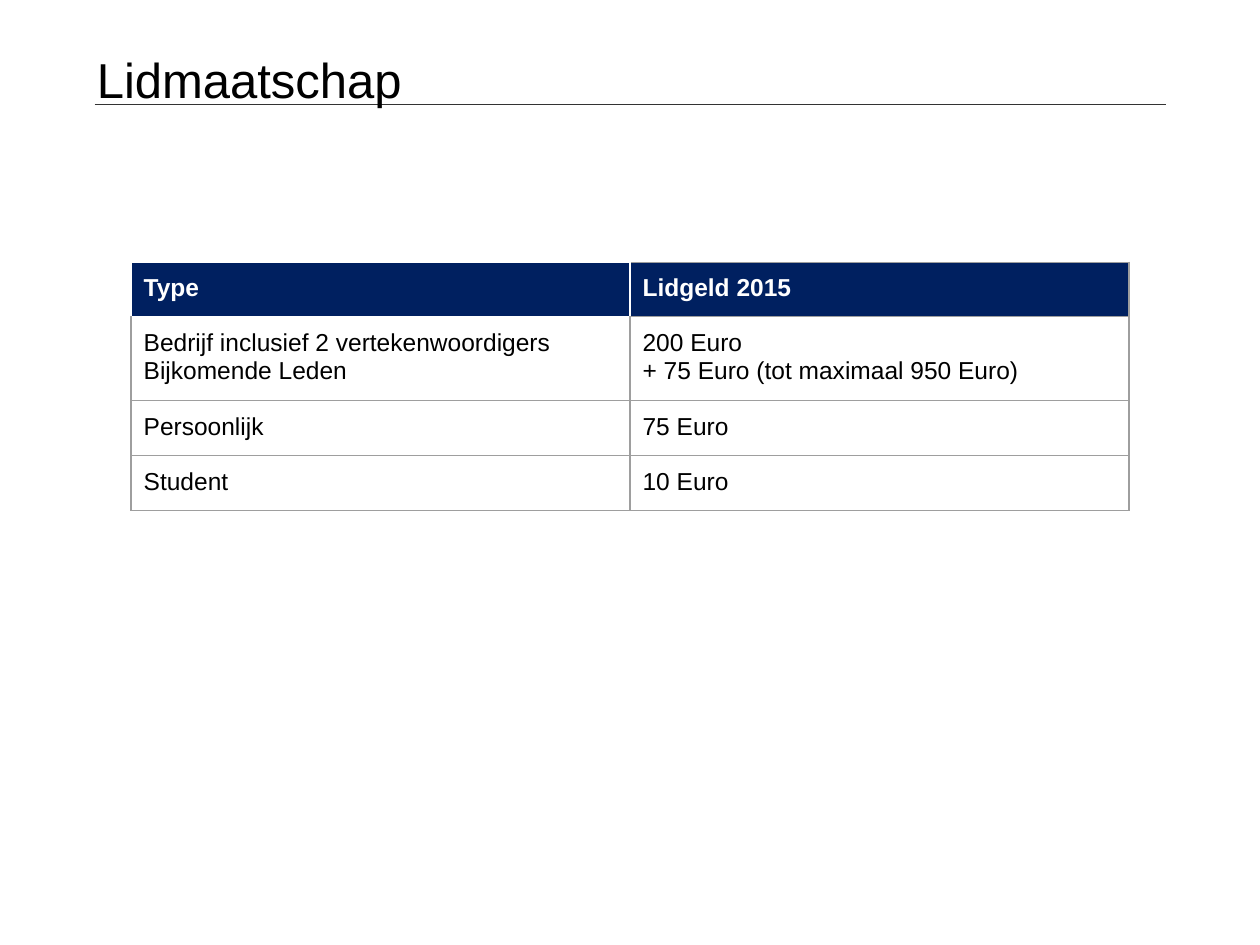
from copy import deepcopy

from pptx import Presentation
from pptx import util as u
from pptx.dml.color import RGBColor
from pptx.enum import shapes, text
from pptx.oxml import parse_xml
from pptx.oxml.ns import nsdecls, qn

WIDTH, HEIGHT = u.Inches(10), u.Inches(7.5)
FONT = "Arial"
COLORS = {
    "black": "000000",
    "white": "FFFFFF",
    "navy": "002060",
    "rule": "333333",
    "grid": "9E9E9E",
}
FEES = [
    ("Type", "Lidgeld 2015"),
    ("Bedrijf inclusief 2 vertekenwoordigers\vBijkomende Leden",
     "200 Euro\v+ 75 Euro (tot maximaal 950 Euro)"),
    ("Persoonlijk", "75 Euro"),
    ("Student", "10 Euro"),
]


def color(name):
    return RGBColor.from_string(COLORS[name])


def format_text(frame, size, color_name, bold=False):
    for para in frame.paragraphs:
        for span in para.runs:
            span.font.name = FONT
            span.font.size = u.Pt(size)
            span.font.bold = bold
            span.font.color.rgb = color(color_name)
        # Line breaks take the size of the text around them
        for line_break in para._p.findall(qn("a:br")):
            line_break.append(deepcopy(para.runs[0]._r.rPr))


def add_title(page, title):
    box = page.shapes.add_textbox(u.Inches(0.67), u.Inches(0.29),
                                  u.Inches(7.09), u.Inches(0.48))
    frame = box.text_frame
    frame.word_wrap = True
    frame.vertical_anchor = text.MSO_ANCHOR.TOP
    frame.margin_top = u.Inches(0.1)
    frame.text = title
    format_text(frame, 28, "black")


def add_rule(page):
    margin, top = int(WIDTH * 0.075), u.Inches(0.83)
    rule = page.shapes.add_connector(shapes.MSO_CONNECTOR.STRAIGHT,
                                     margin, top, WIDTH - margin, top)
    rule.line.color.rgb = color("rule")
    rule.line.width = u.Pt(0.75)
    rule._element.spPr.append(parse_xml(f"<a:effectLst {nsdecls('a')}/>"))


def set_borders(cell, names):
    """Draw the left, right, top and bottom borders, in that order."""
    properties = cell._tc.get_or_add_tcPr()
    for index, (side, name) in enumerate(zip("LRTB", names)):
        properties.insert(index, parse_xml(
            f'<a:ln{side} {nsdecls("a")} w="{u.Pt(0.75)}"><a:solidFill>'
            f'<a:srgbClr val="{COLORS[name]}"/></a:solidFill></a:ln{side}>'))


def border_names(row, column):
    """White lines surround the first header cell, grey ones the rest."""
    if (row, column) == (0, 0):
        return ["white"] * 4
    left = "white" if (row, column) == (0, 1) else "grid"
    top = "white" if (row, column) == (1, 0) else "grid"
    return [left, "grid", top, "grid"]


def fill_cell(cell, words, header):
    cell.margin_left = cell.margin_right = u.Inches(0.1)
    cell.margin_top = cell.margin_bottom = u.Inches(0.1)
    cell.text_frame.text = words
    if header:
        cell.fill.solid()
        cell.fill.fore_color.rgb = color("navy")
    else:
        cell.fill.background()
    format_text(cell.text_frame, 14, "white" if header else "black", header)


def add_fee_table(page):
    column_width, row_height = u.Inches(3.96), u.Inches(0.42)
    rows, columns = len(FEES), len(FEES[0])
    table = page.shapes.add_table(
        rows, columns, u.Inches(1.04), u.Inches(2.08),
        column_width * columns, row_height * rows).table
    for row, words in enumerate(FEES):
        for column, entry in enumerate(words):
            cell = table.cell(row, column)
            fill_cell(cell, entry, header=row == 0)
            set_borders(cell, border_names(row, column))


def main():
    deck = Presentation()
    deck.slide_width, deck.slide_height = WIDTH, HEIGHT
    page = deck.slides.add_slide(deck.slide_layouts[6])
    # Heading with its rule
    add_rule(page)
    add_title(page, "Lidmaatschap")
    # Membership fees
    add_fee_table(page)
    deck.save("out.pptx")


if __name__ == "__main__":
    main()
